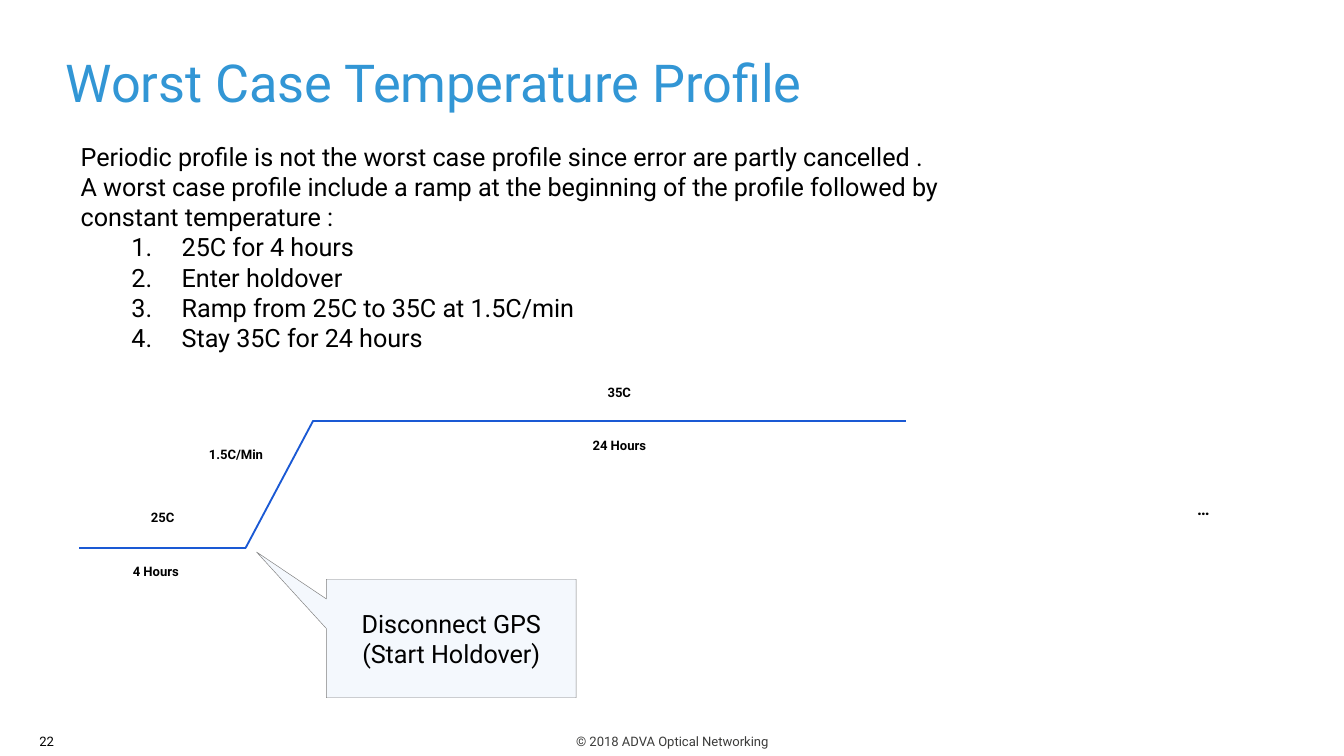
from lxml import etree
from pptx import Presentation
from pptx import util as u
from pptx.dml.color import RGBColor
from pptx.enum import shapes, text
from pptx.oxml import ns

FONT = "Roboto"
BLACK = "000000"
CENTER = text.PP_ALIGN.CENTER
RIGHT = text.PP_ALIGN.RIGHT

# Corners of the temperature curve, in cm
CURVE = [(1.5, 10.36), (4.64, 10.36), (5.92, 7.95), (17.12, 7.95)]

# Wording, left, top, width in cm
LABELS = [
    ("25C", 0.13, 9.5, 5.89),
    ("4 Hours", 0, 10.52, 5.89),
    ("1.5C/Min", 3.43, 8.31, 2.06),
    ("35C", 8.76, 7.14, 5.89),
    ("24 Hours", 8.76, 8.15, 5.89),
    ("…", 19.96, 9.3, 5.56),
]

INTRO = [
    "Periodic profile is not the worst case profile since error are partly cancelled .",
    "A worst case profile include a ramp at the beginning of the profile "
    "followed by constant temperature :",
]
STEPS = [
    "25C for 4 hours",
    "Enter holdover",
    "Ramp from 25C to 35C at 1.5C/min",
    "Stay 35C for 24 hours",
]


def color(value):
    return RGBColor.from_string(value)


def place(shape, left, top, width, height):
    shape.left, shape.top = u.Cm(left), u.Cm(top)
    shape.width, shape.height = u.Cm(width), u.Cm(height)


def format_para(para, size, tint=BLACK, bold=False, align=None):
    para.alignment = align
    para.space_before = u.Pt(0)
    for span in para.runs:
        span.font.name = FONT
        span.font.size = u.Pt(size)
        span.font.bold = bold
        span.font.color.rgb = color(tint)


def set_bullet(para, kind, indent=0, hanging=0, **attributes):
    properties = para._p.get_or_add_pPr()
    properties.set("marL", str(u.Cm(indent)))
    properties.set("indent", str(-u.Cm(hanging)))
    etree.SubElement(properties, ns.qn(kind), attributes)


def add_title(slide, wording):
    title = slide.shapes.title
    place(title, 0.99, 0, 23.11, 2.16)
    frame = title.text_frame
    frame.text = wording
    frame.auto_size = text.MSO_AUTO_SIZE.NONE
    frame.vertical_anchor = text.MSO_ANCHOR.BOTTOM
    frame.margin_left = u.Cm(0.25)
    frame.margin_top = frame.margin_right = frame.margin_bottom = 0
    para = frame.paragraphs[0]
    format_para(para, 28, "3296D5", align=text.PP_ALIGN.LEFT)
    para.line_spacing = 0.9


def add_body(slide):
    body = slide.placeholders[1]
    place(body, 1.27, 2.54, 18.44, 4.29)
    frame = body.text_frame
    frame.text = "\n".join(INTRO + STEPS)
    frame.auto_size = text.MSO_AUTO_SIZE.NONE
    for index, para in enumerate(frame.paragraphs):
        if index < len(INTRO):
            set_bullet(para, "a:buNone")
        else:
            para.level = 1
            set_bullet(para, "a:buAutoNum", 1.91, 0.95, type="arabicPeriod")
        format_para(para, 13.5)


def add_label(slide, wording, left, top, width, tint=BLACK, bold=True, align=CENTER):
    box = slide.shapes.add_textbox(u.Cm(left), u.Cm(top), u.Cm(width), u.Cm(0.56))
    frame = box.text_frame
    frame.word_wrap = True
    frame.text = wording
    size = 9 if wording == "…" else 7
    format_para(frame.paragraphs[0], size, tint, bold, align)


def add_line(slide, start, end):
    line = slide.shapes.add_connector(
        shapes.MSO_CONNECTOR.STRAIGHT, *(u.Cm(value) for value in start + end))
    line.line.color.rgb = color("1A59D4")
    line.line.width = u.Pt(1)
    etree.SubElement(line._element.spPr, ns.qn("a:effectLst"))


def add_callout(slide, wording):
    callout = slide.shapes.add_shape(
        shapes.MSO_SHAPE.RECTANGULAR_CALLOUT,
        u.Cm(6.17), u.Cm(10.95), u.Cm(4.72), u.Cm(2.24))
    callout.adjustments[0] = -0.78
    callout.adjustments[1] = -0.73
    callout.shadow.inherit = False
    callout.fill.solid()
    callout.fill.fore_color.rgb = color("F4F8FD")
    callout.line.color.rgb = color("808080")
    callout.line.width = u.Pt(0.25)
    frame = callout.text_frame
    frame.word_wrap = True
    frame.vertical_anchor = text.MSO_ANCHOR.MIDDLE
    frame.text = wording
    format_para(frame.paragraphs[0], 13.5, align=CENTER)


def main():
    deck = Presentation()
    deck.slide_width, deck.slide_height = u.Cm(25.4), u.Cm(14.29)
    slide = deck.slides.add_slide(deck.slide_layouts[1])

    # Footer
    add_label(slide, "© 2018 ADVA Optical Networking", 0.64, 13.74, 24.13, "3C3C3B", False)
    add_label(slide, "22", 0, 13.74, 1.27, bold=False, align=RIGHT)

    # Title and explanation
    add_title(slide, "Worst Case Temperature Profile")
    add_body(slide)

    # Temperature curve with its labels
    for start, end in zip(CURVE, CURVE[1:]):
        add_line(slide, start, end)
    for label in LABELS:
        add_label(slide, *label)
    add_callout(slide, "Disconnect GPS (Start Holdover)")

    deck.save("out.pptx")


if __name__ == "__main__":
    main()
